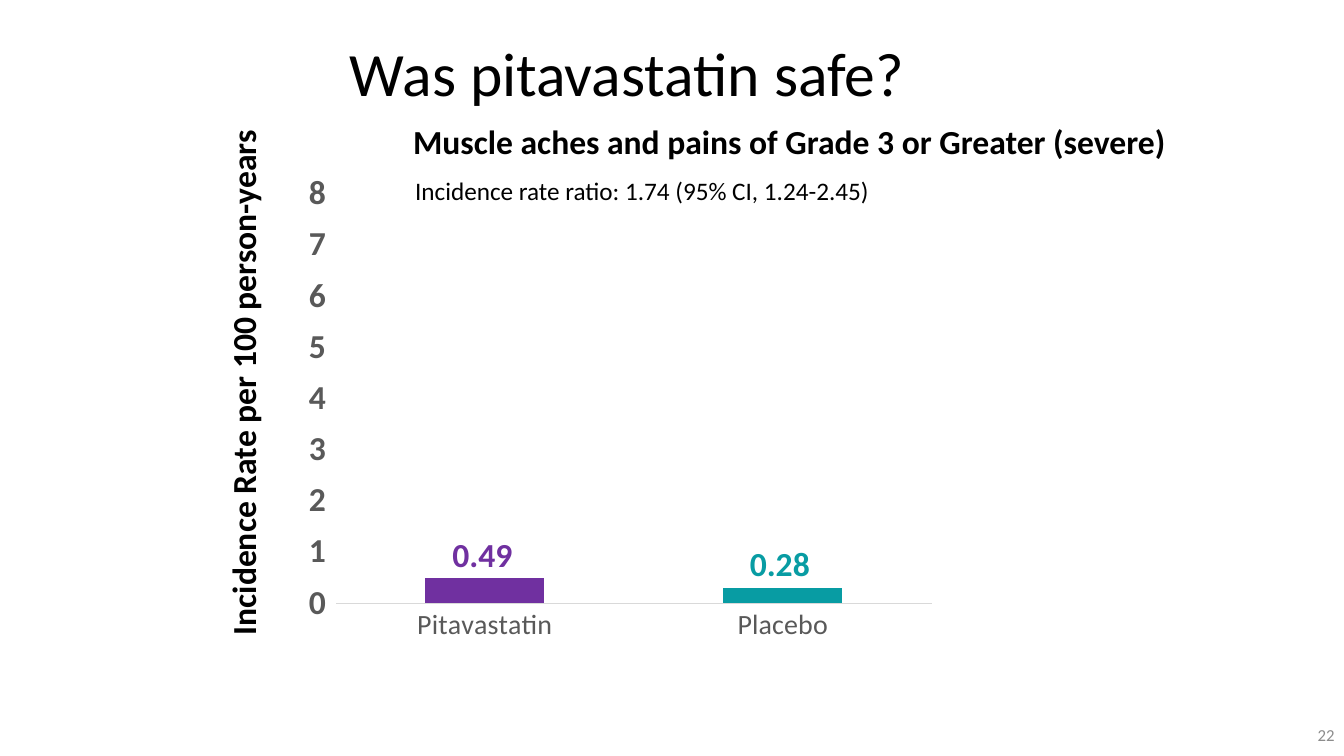
import pptx
import pptx.chart.data
import pptx.dml.color
import pptx.enum.chart
import pptx.enum.text
import pptx.oxml
import pptx.util

Pt = pptx.util.Pt
ALIGN = pptx.enum.text.PP_ALIGN
ANCHOR = pptx.enum.text.MSO_ANCHOR
TICK = pptx.enum.chart.XL_TICK_MARK

FONT = "Calibri"
COLORS = {
    "black": "000000",
    "white": "FFFFFF",
    "axis text": "595959",
    "axis line": "D9D9D9",
    "page number": "8C8C8C",
    "series": "0F6FC6",
    "pitavastatin": "7030A0",
    "placebo": "089CA3",
}

TITLE = "Was pitavastatin safe?"
TITLE_FRAME = (242.64, 2.16, 828, 104.4)

# drug, bar height, bar colour
RATES = [("Pitavastatin", 0.5, "pitavastatin"), ("Placebo", 0.3, "placebo")]
CHART_FRAME = (193.68, 123.84, 472.32, 396)
PLOT = {"x": 0.098, "y": 0.031, "w": 0.902, "h": 0.743}

# text, frame, size, bold, colour, wrap, rotation
LABELS = [
    ("0.49", (316.08, 378, 60.48, 36), 24, True, "pitavastatin", True, 0),
    ("0.28", (528.48, 384.48, 60.48, 36), 24, True, "placebo", True, 0),
    ("Incidence Rate per 100 person-years",
     (-15.84, 253.44, 378.72, 36), 24, True, "black", False, 270),
    ("Muscle aches and pains of Grade 3 or Greater (severe)",
     (288, 82.8, 557.28, 36), 24, True, "black", False, 0),
    ("Incidence rate ratio: 1.74 (95% CI, 1.24-2.45)",
     (289.44, 121.68, 342.72, 28.8), 18, False, "black", False, 0),
]
PAGE_NUMBER = ("22", (744.48, 510.48, 216, 28.8), 12, False, "page number", True, 0)


def rgb(name):
    return pptx.dml.color.RGBColor.from_string(COLORS[name])


def points(frame):
    return [Pt(length) for length in frame]


def style_font(font, size, color, bold=False):
    font.name = FONT
    font.size = Pt(size)
    font.bold = bold
    font.color.rgb = rgb(color)


def style_line(line, color):
    line.color.rgb = rgb(color)
    line.width = Pt(0.75)


def add_label(page, text, frame, size, bold, color, wrap, rotation):
    box = page.shapes.add_textbox(*points(frame))
    box.rotation = rotation
    box.text_frame.word_wrap = wrap
    span = box.text_frame.paragraphs[0].add_run()
    span.text = text
    style_font(span.font, size, color, bold)
    return box


def add_title(page):
    title = page.shapes.title
    title.left, title.top, title.width, title.height = points(TITLE_FRAME)
    title.text_frame.vertical_anchor = ANCHOR.MIDDLE
    title.text_frame.auto_size = pptx.enum.text.MSO_AUTO_SIZE.NONE
    para = title.text_frame.paragraphs[0]
    para.alignment = ALIGN.LEFT
    para.line_spacing = 0.9
    span = para.add_run()
    span.text = TITLE
    style_font(span.font, 44, "black")


def fix_plot_area(chart):
    """Pin the inner plot area to the fractions in PLOT."""
    plot_area = chart._chartSpace.chart.plotArea
    for old in plot_area.xpath("c:layout"):
        plot_area.remove(old)
    modes = "".join(f'<c:{side}Mode val="edge"/>' for side in "xy")
    sizes = "".join(f'<c:{side} val="{value}"/>' for side, value in PLOT.items())
    plot_area.insert(0, pptx.oxml.parse_xml(
        '<c:layout xmlns:c="http://schemas.openxmlformats.org/drawingml/2006/chart">'
        f'<c:manualLayout><c:layoutTarget val="inner"/>{modes}{sizes}'
        '</c:manualLayout></c:layout>'))


def add_rate_chart(page):
    data = pptx.chart.data.CategoryChartData()
    data.categories = [drug for drug, _, _ in RATES]
    data.add_series("Series 1", [rate for _, rate, _ in RATES])
    chart = page.shapes.add_chart(
        pptx.enum.chart.XL_CHART_TYPE.COLUMN_STACKED, *points(CHART_FRAME), data).chart
    chart.has_legend = False
    chart.has_title = False
    style_font(chart.font, 10, "black")

    plot = chart.plots[0]
    plot.vary_by_categories = False
    plot.gap_width = 150
    plot.overlap = 100
    series = plot.series[0]
    series.format.fill.solid()
    series.format.fill.fore_color.rgb = rgb("series")
    for index, (_, _, color) in enumerate(RATES):
        fill = series.points[index].format.fill
        fill.solid()
        fill.fore_color.rgb = rgb(color)

    drugs = chart.category_axis
    drugs.major_tick_mark = TICK.NONE
    style_font(drugs.tick_labels.font, 20, "axis text")
    style_line(drugs.format.line, "axis line")

    scale = chart.value_axis
    scale.minimum_scale, scale.maximum_scale, scale.major_unit = 0, 8, 1
    scale.major_tick_mark = TICK.OUTSIDE
    scale.tick_labels.number_format = "General"
    scale.tick_labels.number_format_is_linked = False
    style_font(scale.tick_labels.font, 24, "axis text", True)
    style_line(scale.format.line, "white")
    style_line(scale.major_gridlines.format.line, "white")
    fix_plot_area(chart)


def main():
    deck = pptx.Presentation()
    deck.slide_width, deck.slide_height = Pt(960), Pt(540)
    page = deck.slides.add_slide(deck.slide_layouts[5])
    number = add_label(page, *PAGE_NUMBER)
    number.text_frame.vertical_anchor = ANCHOR.MIDDLE
    number.text_frame.paragraphs[0].alignment = ALIGN.RIGHT
    add_rate_chart(page)
    for label in LABELS:
        add_label(page, *label)
    add_title(page)
    deck.save("out.pptx")


if __name__ == "__main__":
    main()
